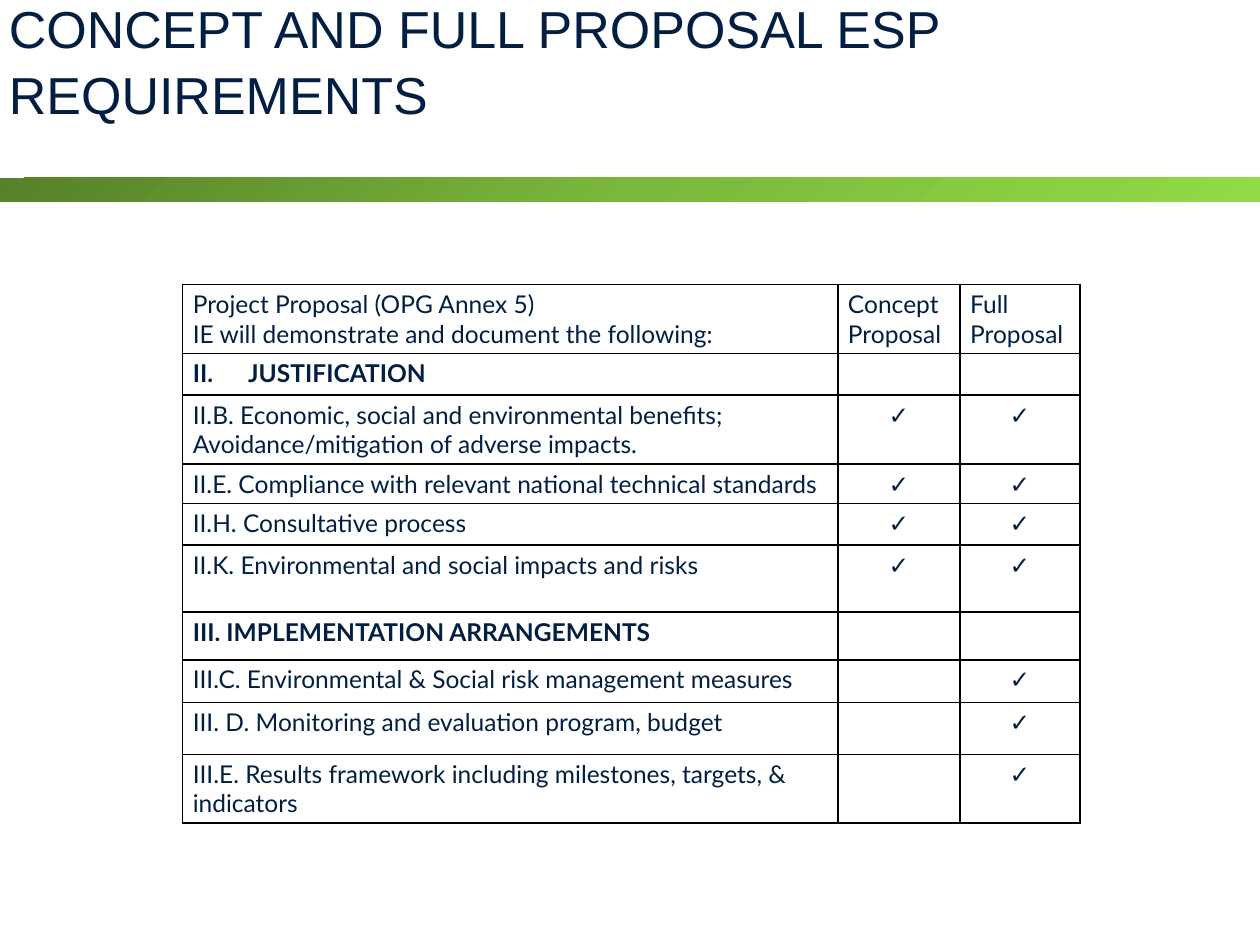
"""Build the slide on concept and full proposal ESP requirements."""
from copy import deepcopy

from lxml.etree import SubElement
from pptx import Presentation
from pptx.dml.color import RGBColor
from pptx.enum.shapes import MSO_SHAPE as SHAPE
from pptx.enum.text import MSO_ANCHOR as ANCHOR, MSO_AUTO_SIZE as AUTO, PP_ALIGN as ALIGN
from pptx.oxml.ns import qn
from pptx.util import Inches, Pt

COLORS = {"navy": "021F43", "border": "000000",
          "dark_green": "57812A", "green": "7BB73B", "light_green": "92DA46"}
TICK = "✓"
COLUMN_WIDTHS = [5.2, 0.97, 0.95]
ROWS = [
    (0.53, "Project Proposal (OPG Annex 5)\nIE will demonstrate and document the following:",
     "Concept Proposal", "Full Proposal"),
    (0.33, "JUSTIFICATION", "", ""),
    (0.54, "II.B. Economic, social and environmental benefits; "
           "Avoidance/mitigation of adverse impacts.", TICK, TICK),
    (0.31, "II.E. Compliance with relevant national technical standards", TICK, TICK),
    (0.33, "II.H. Consultative process", TICK, TICK),
    (0.53, "II.K. Environmental and social impacts and risks", TICK, TICK),
    (0.38, "III. IMPLEMENTATION ARRANGEMENTS", "", ""),
    (0.34, "III.C. Environmental & Social risk management measures", "", TICK),
    (0.41, "III. D. Monitoring and evaluation program, budget", "", TICK),
    (0.54, "III.E. Results framework including milestones, targets, & indicators", "", TICK),
]
NUMBERED_ROW = 1
SECTION_ROWS = (NUMBERED_ROW, 6)


def set_font(paragraph, name, size, bold=False):
    font = paragraph.font
    font.name, font.size, font.bold = name, Pt(size), bold
    font.color.rgb = RGBColor.from_string(COLORS["navy"])


def add_borders(cell):
    properties = cell._tc.get_or_add_tcPr()
    for side in ("lnL", "lnR", "lnT", "lnB"):
        line = SubElement(properties, qn(f"a:{side}"), w=str(Pt(1)))
        fill = SubElement(line, qn("a:solidFill"))
        SubElement(fill, qn("a:srgbClr"), val=COLORS["border"])


deck = Presentation()
deck.slide_width, deck.slide_height = Inches(10), Inches(7.5)
page = deck.slides.add_slide(deck.slide_layouts[5])

title = page.shapes.title
title.left, title.top, title.width, title.height = 0, 0, Inches(10), Inches(0.94)
frame = title.text_frame
frame.text = "CONCEPT AND FULL PROPOSAL ESP REQUIREMENTS"
frame.auto_size, frame.word_wrap = AUTO.NONE, True
frame.vertical_anchor = ANCHOR.MIDDLE
frame.margin_left = frame.margin_right = Inches(0.07)
frame.margin_top = frame.margin_bottom = Inches(0.04)
heading = frame.paragraphs[0]
heading.alignment, heading.line_spacing = ALIGN.LEFT, 1.05
set_font(heading, "Arial", 29.7)

bar = page.shapes.add_shape(SHAPE.RECTANGLE, 0, Inches(1.41), Inches(10), Inches(0.19))
bar.shadow.inherit = False
bar.line.fill.background()
bar.fill.gradient()
bar.fill.gradient_angle = 315
stop_list = bar._element.spPr.find(".//" + qn("a:gsLst"))
stop_list.append(deepcopy(stop_list[-1]))
bar_colors = ("dark_green", "green", "light_green")
for stop, position, color in zip(bar.fill.gradient_stops, (0, 0.5, 1), bar_colors):
    stop.position = position
    stop.color.rgb = RGBColor.from_string(COLORS[color])

table = page.shapes.add_table(
    len(ROWS), len(COLUMN_WIDTHS), Inches(1.45), Inches(2.26),
    Inches(sum(COLUMN_WIDTHS)), Inches(sum(row[0] for row in ROWS))).table
table.first_row = table.horz_banding = False
for column, width in zip(table.columns, COLUMN_WIDTHS):
    column.width = Inches(width)

for row_index, (height, *texts) in enumerate(ROWS):
    table.rows[row_index].height = Inches(height)
    for column_index, text in enumerate(texts):
        cell = table.cell(row_index, column_index)
        cell.text = text
        cell.margin_left = cell.margin_right = Inches(0.08)
        cell.margin_top = cell.margin_bottom = Inches(0.04)
        add_borders(cell)
        cell.fill.background()
        for para in cell.text_frame.paragraphs:
            if text == TICK:
                para.alignment = ALIGN.CENTER
            if row_index == NUMBERED_ROW and text:
                layout = para._p.get_or_add_pPr()
                layout.set("marL", str(Inches(0.44)))
                layout.set("indent", str(-Inches(0.44)))
                bullet_color = SubElement(layout, qn("a:buClr"))
                SubElement(bullet_color, qn("a:srgbClr"), val=COLORS["navy"])
                SubElement(layout, qn("a:buAutoNum"), type="romanUcPeriod", startAt="2")
            set_font(para, "Lato", 14, row_index in SECTION_ROWS)
            if not text:
                SubElement(para._p, qn("a:endParaRPr"), sz="1400")

deck.save("out.pptx")
